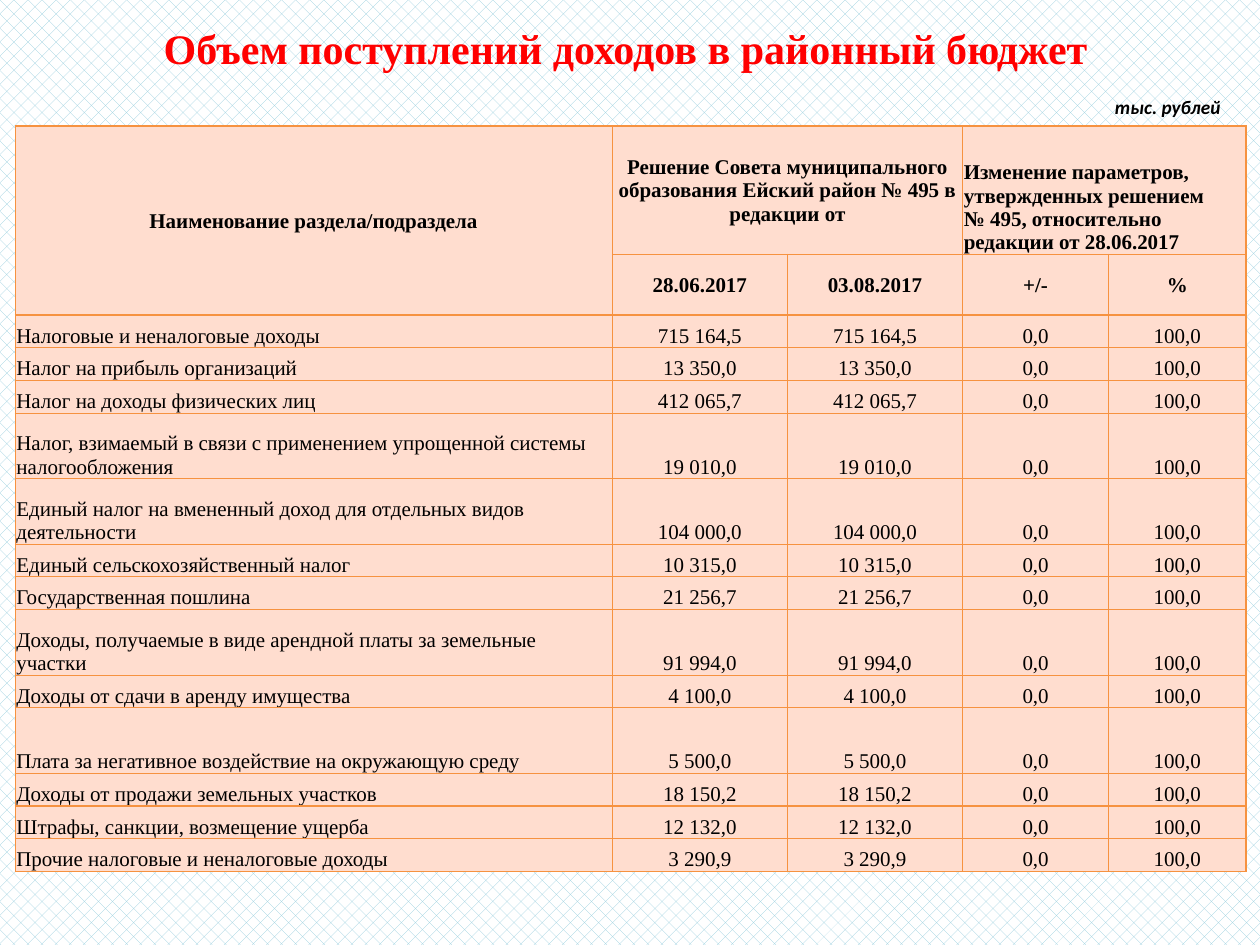
from lxml.etree import SubElement
from pptx import Presentation
from pptx.dml.color import RGBColor
from pptx.enum.dml import MSO_PATTERN_TYPE as Pattern
from pptx.enum.text import MSO_ANCHOR as Anchor, MSO_AUTO_SIZE as AutoSize, PP_ALIGN as Align
from pptx.oxml.ns import qn
from pptx.util import Inches, Pt

COLORS = {
    "title": "FF0000",
    "text": "000000",
    "cell": "FFDDCF",
    "border": "F69240",
    "hatch": "93CDDD",
    "paper": "FFFFFF",
}

COLUMN_WIDTHS = [4.74, 1.39, 1.39, 1.16, 1.09]
HEADER_HEIGHTS = [1.02, 0.48]
LINE_HEIGHT = 0.26

# Column, row, columns spanned, rows spanned, text, alignment, anchor, right margin
HEADERS = [
    (0, 0, 1, 2, "Наименование раздела/подраздела", Align.CENTER, Anchor.MIDDLE, 0.01),
    (1, 0, 2, 1, "Решение Совета муниципального образования Ейский район № 495 в редакции от",
     Align.CENTER, Anchor.MIDDLE, 0.01),
    (3, 0, 2, 1, "Изменение параметров, утвержденных решением № 495, относительно "
     "редакции от 28.06.2017", Align.LEFT, Anchor.BOTTOM, 0.25),
] + [
    (column, 1, 1, 1, text, Align.CENTER, Anchor.MIDDLE, 0.01)
    for column, text in enumerate(["28.06.2017", "03.08.2017", "+/-", "%"], start=1)
]

# Income item, amount (the same in both editions), height in lines
INCOMES = [
    ("Налоговые и неналоговые доходы", "715 164,5", 1),
    ("Налог на прибыль организаций", "13 350,0", 1),
    ("Налог на доходы физических лиц", "412 065,7", 1),
    ("Налог, взимаемый в связи с применением упрощенной системы налогообложения", "19 010,0", 2),
    ("Единый налог на вмененный доход для отдельных видов деятельности", "104 000,0", 2),
    ("Единый сельскохозяйственный налог", "10 315,0", 1),
    ("Государственная пошлина", "21 256,7", 1),
    ("Доходы, получаемые в виде арендной платы за земельные участки", "91 994,0", 2),
    ("Доходы от сдачи в аренду имущества", "4 100,0", 1),
    ("Плата за негативное воздействие на окружающую среду", "5 500,0", 2),
    ("Доходы от продажи земельных участков", "18 150,2", 1),
    ("Штрафы, санкции, возмещение ущерба", "12 132,0", 1),
    ("Прочие налоговые и неналоговые доходы", "3 290,9", 1),
]


def rgb(name):
    return RGBColor.from_string(COLORS[name])


class BudgetPage:
    def __init__(self, page, font="Times New Roman"):
        self.page = page
        self.font = font

    def background(self):
        fill = self.page.background.fill
        fill.patterned()
        fill.pattern = Pattern.PERCENT_25
        fill.fore_color.rgb = rgb("hatch")
        fill.back_color.rgb = rgb("paper")

    def add_text(self, frame, text, size, color="text", align=Align.LEFT,
                 bold=False, italic=False, font=None):
        para = frame.paragraphs[0]
        para.alignment = align
        span = para.add_run()
        span.text = text
        span.font.name = font or self.font
        span.font.size = Pt(size)
        span.font.bold = bold
        span.font.italic = italic
        span.font.color.rgb = rgb(color)

    def title(self, text, left, top, width, height):
        box = self.page.shapes.title
        box.left, box.top = Inches(left), Inches(top)
        box.width, box.height = Inches(width), Inches(height)
        frame = box.text_frame
        frame.vertical_anchor = Anchor.TOP
        frame.auto_size = AutoSize.NONE
        self.add_text(frame, text, 24, "title", Align.CENTER, bold=True)

    def unit_note(self, text, left, top, width, height):
        box = self.page.shapes.add_textbox(
            Inches(left), Inches(top), Inches(width), Inches(height))
        box.text_frame.word_wrap = False
        self.add_text(box.text_frame, text, 11, bold=True, italic=True, font="Calibri")

    def table(self, left, top, widths, heights):
        grid = self.page.shapes.add_table(
            len(heights), len(widths), Inches(left), Inches(top),
            Inches(sum(widths)), Inches(sum(heights))).table
        grid.first_row = grid.horz_banding = False
        for column, width in zip(grid.columns, widths):
            column.width = Inches(width)
        for row, height in zip(grid.rows, heights):
            row.height = Inches(height)
        for cell in grid.iter_cells():
            self.border(cell)
            cell.fill.solid()
            cell.fill.fore_color.rgb = rgb("cell")
        return grid

    def border(self, cell):
        properties = cell._tc.get_or_add_tcPr()
        for side in ("a:lnL", "a:lnR", "a:lnT", "a:lnB"):
            line = SubElement(properties, qn(side), w=str(Pt(0.75)))
            fill = SubElement(line, qn("a:solidFill"))
            SubElement(fill, qn("a:srgbClr"), val=COLORS["border"])

    def cell(self, cell, text, align, anchor=Anchor.BOTTOM, right=0.01, bold=False):
        cell.margin_left = cell.margin_top = Inches(0.01)
        cell.margin_right = Inches(right)
        cell.margin_bottom = 0
        cell.vertical_anchor = anchor
        self.add_text(cell.text_frame, text, 12, align=align, bold=bold)


def main():
    deck = Presentation()
    deck.slide_width, deck.slide_height = Inches(10), Inches(7.5)
    budget = BudgetPage(deck.slides.add_slide(deck.slide_layouts[5]))
    budget.background()
    budget.title("Объем поступлений доходов в районный бюджет", 0.12, 0.13, 9.69, 0.5)
    budget.unit_note("тыс. рублей", 8.75, 0.71, 1.05, 0.29)

    heights = HEADER_HEIGHTS + [lines * LINE_HEIGHT for _, _, lines in INCOMES]
    grid = budget.table(0.12, 1, COLUMN_WIDTHS, heights)
    for column, row, across, down, text, align, anchor, right in HEADERS:
        cell = grid.cell(row, column)
        if across * down > 1:
            cell.merge(grid.cell(row + down - 1, column + across - 1))
        budget.cell(cell, text, align, anchor, right, bold=True)

    for row, (item, amount, _) in enumerate(INCOMES, start=len(HEADER_HEIGHTS)):
        for column, text in enumerate([item, amount, amount, "0,0", "100,0"]):
            budget.cell(grid.cell(row, column), text, Align.CENTER if column else Align.LEFT)

    deck.save("out.pptx")


if __name__ == "__main__":
    main()
